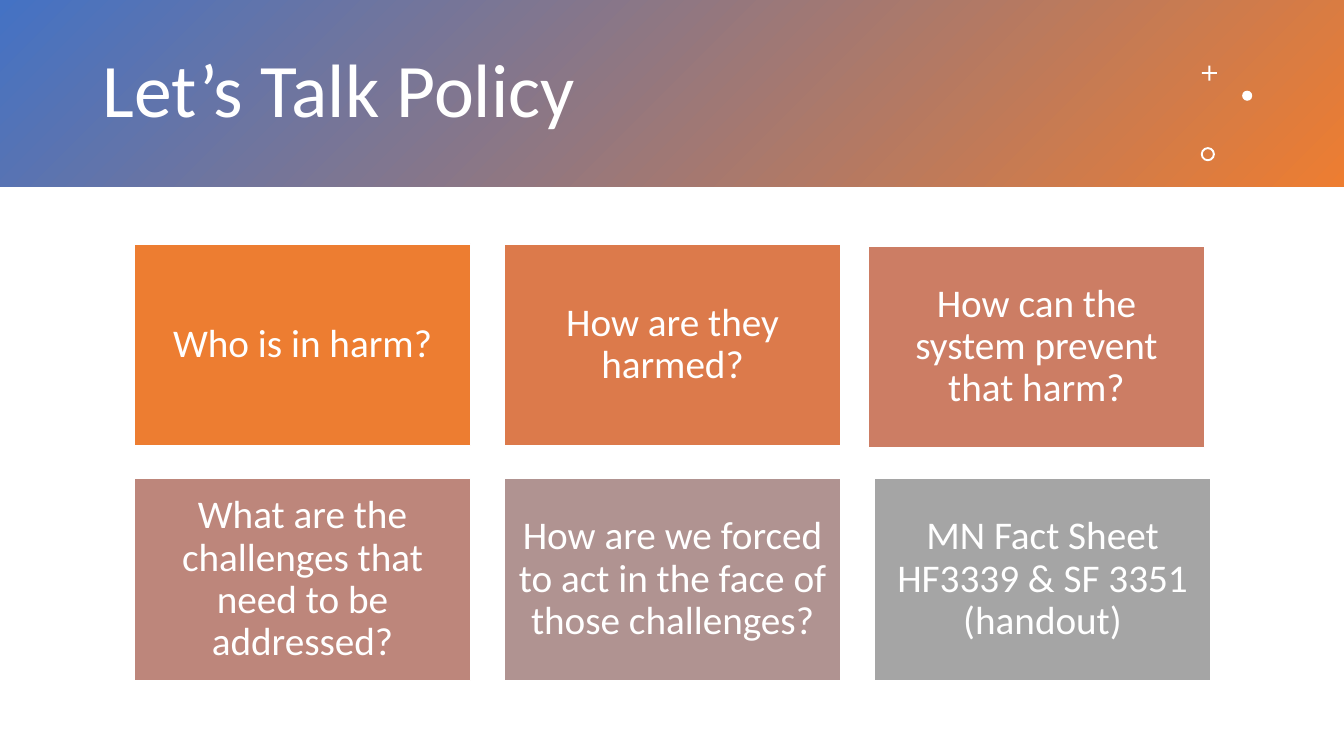
from pptx import Presentation
from pptx.dml.color import RGBColor
from pptx.enum.shapes import MSO_SHAPE
from pptx.enum.text import MSO_ANCHOR, MSO_AUTO_SIZE, PP_ALIGN
from pptx.util import Inches, Pt

RECT, CROSS = MSO_SHAPE.RECTANGLE, MSO_SHAPE.CROSS
OVAL, DONUT = MSO_SHAPE.OVAL, MSO_SHAPE.DONUT
MIDDLE, NO_FIT = MSO_ANCHOR.MIDDLE, MSO_AUTO_SIZE.NONE
LEFT, CENTER = PP_ALIGN.LEFT, PP_ALIGN.CENTER

COLORS = {"white": "FFFFFF", "blue": "4472C4", "orange": "ED7D31",
          "copper": "DC7A4B", "coral": "CC7D64", "clay": "BD867B",
          "mauve": "B09391", "gray": "A5A5A5"}
RGB = {name: RGBColor.from_string(value) for name, value in COLORS.items()}


def add_plain_shape(kind, x, y, w, h, color):
    """Add a shape with a solid fill, no line and no shadow."""
    sp = s.shapes.add_shape(kind, Inches(x), Inches(y), Inches(w), Inches(h))
    sp.shadow.inherit = False
    sp.fill.solid()
    sp.fill.fore_color.rgb = RGB[color]
    sp.line.fill.background()
    return sp


def set_text(sp, text, size, align):
    tf = sp.text_frame
    tf.text = text
    tf.word_wrap = True
    tf.auto_size = NO_FIT
    tf.vertical_anchor = MIDDLE
    p = tf.paragraphs[0]
    p.alignment = align
    p.line_spacing = 0.9
    font = p.runs[0].font
    font.name = "Calibri"
    font.size = Pt(size)
    font.color.rgb = RGB["white"]


prs = Presentation()
prs.slide_width, prs.slide_height = Inches(13.33), Inches(7.5)
s = prs.slides.add_slide(prs.slide_layouts[5])

# Title on a gradient band
title = s.shapes.title
title.left, title.top = Inches(0.92), Inches(0.33)
title.width, title.height = Inches(10.75), Inches(1.19)
set_text(title, "Let’s Talk Policy", 54, LEFT)

band = add_plain_shape(RECT, 0, 0, 13.33, 1.85, "blue")
band.fill.gradient()
band.fill.gradient_angle = 315
for stop, color in zip(band.fill.gradient_stops, ("blue", "orange")):
    stop.color.rgb = RGB[color]
title.element.addprevious(band.element)

# Small ornaments: plus, dot and ring
ornaments = [(CROSS, 11.92, 0.65, 0.15, 0.44),
             (OVAL, 12.32, 0.9, 0.1, None),
             (DONUT, 11.91, 1.46, 0.14, 0.14)]
for kind, x, y, size, adjustment in ornaments:
    sp = add_plain_shape(kind, x, y, size, size, "white")
    if adjustment is not None:
        sp.adjustments[0] = adjustment

# Question cards in a grid of three columns; the third sits slightly off it
cards = [("Who is in harm?", "orange", 0, 0),
         ("How are they harmed?", "copper", 0, 0),
         ("How can the system prevent that harm?", "coral", -0.06, 0.02),
         ("What are the challenges that need to be addressed?", "clay", 0, 0),
         ("How are we forced to act in the face of those challenges?", "mauve", 0, 0),
         ("MN Fact Sheet HF3339 & SF 3351 (handout)", "gray", 0, 0)]
for i, (text, color, dx, dy) in enumerate(cards):
    row, col = divmod(i, 3)
    card = add_plain_shape(RECT, 1.33 + 3.67 * col + dx, 2.42 + 2.33 * row + dy,
                           3.34, 2, color)
    card.line.color.rgb = RGB["white"]
    card.line.width = Pt(1)
    set_text(card, text, 28, CENTER)
    tf = card.text_frame
    tf.margin_left = tf.margin_right = Inches(0.12)
    tf.margin_top = tf.margin_bottom = Inches(0.12)

prs.save("out.pptx")
